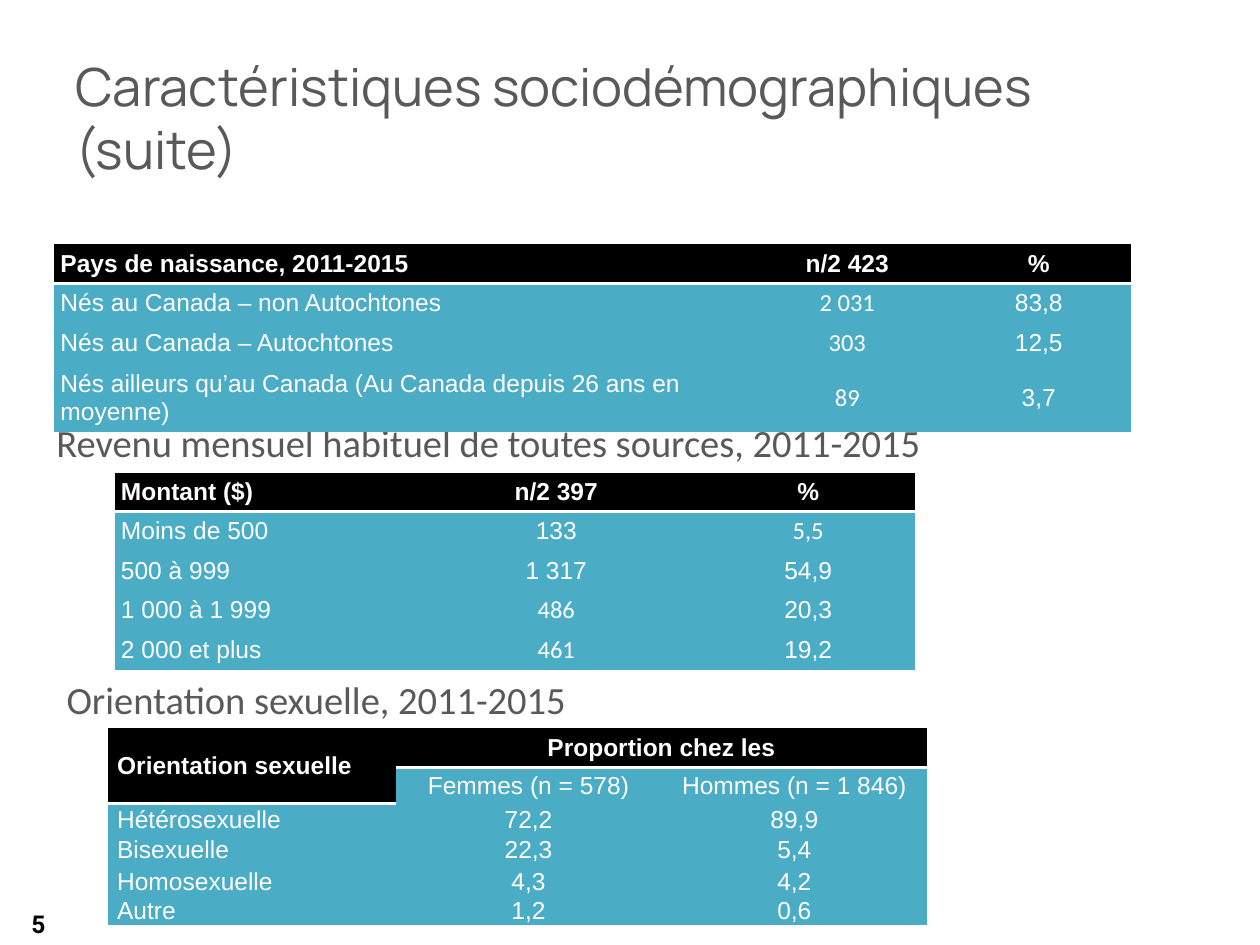
"""Build the slide of sociodemographic characteristics with its three tables."""

from dataclasses import dataclass

from lxml.etree import SubElement
from pptx import Presentation
from pptx.dml.color import RGBColor
from pptx.enum.text import MSO_ANCHOR, PP_ALIGN
from pptx.oxml import parse_xml
from pptx.oxml.ns import nsdecls, qn
from pptx.slide import Slide
from pptx.table import _Cell
from pptx.util import Inches, Pt


@dataclass(frozen=True)
class Theme:
    white: str = "FFFFFF"
    black: str = "000000"
    gray: str = "595959"
    blue: str = "4BACC6"
    title_font: str = "Manrope"
    heading_font: str = "Calibri"
    table_font: str = "Arial"
    number_font: str = "Roboto"
    title_size: int = 30
    heading_size: int = 22
    table_size: int = 14
    rule_width: int = 2
    no_table_style: str = "{2D5ABB26-0587-4C30-8999-92F81FD0307C}"


THEME = Theme()


@dataclass(frozen=True)
class Label:
    text: str
    box: tuple[float, float, float, float]
    font: str
    size: int
    color: str = THEME.gray
    bold: bool = False
    wrap: bool = True
    align: PP_ALIGN = PP_ALIGN.LEFT
    anchor: MSO_ANCHOR = MSO_ANCHOR.MIDDLE


@dataclass(frozen=True)
class DataTable:
    left: float
    top: float
    columns: tuple[float, ...]
    heights: tuple[float, ...]
    rows: tuple[tuple[str, ...], ...]
    side_margin: float = 0.05
    body_margin: float = 0.04
    body_anchor: MSO_ANCHOR = MSO_ANCHOR.MIDDLE
    calibri_cells: tuple[tuple[int, int], ...] = ()
    extra_header_cells: tuple[tuple[int, int], ...] = ()
    merges: tuple[tuple[int, int, int, int], ...] = ()


def heading(text: str, left: float, top: float, width: float) -> Label:
    return Label(text, (left, top, width, 0.47), THEME.heading_font, THEME.heading_size,
                 wrap=False, anchor=MSO_ANCHOR.TOP)


LABELS = (
    Label("5", (0, 7.13, 0.46, 0.4), THEME.number_font, THEME.table_size,
          THEME.black, bold=True, align=PP_ALIGN.RIGHT),
    Label("Caractéristiques sociodémographiques (suite)", (0.5, 0.3, 9, 1.25),
          THEME.title_font, THEME.title_size),
    heading("Revenu mensuel habituel de toutes sources, 2011-2015", 0.35, 3.28, 7.14),
    heading("Orientation sexuelle, 2011-2015", 0.43, 5.32, 4.21),
)

BIRTH_COUNTRY = DataTable(
    0.43, 1.94, (5.51, 1.57, 1.47), (0.31, 0.31, 0.32, 0.54),
    (
        ("Pays de naissance, 2011-2015", "n/2 423", "%"),
        ("Nés au Canada – non Autochtones", "2 031", "83,8"),
        ("Nés au Canada – Autochtones", "303", "12,5"),
        ("Nés ailleurs qu’au Canada (Au Canada depuis 26 ans en moyenne)", "89", "3,7"),
    ),
    calibri_cells=((1, 1), (2, 1), (3, 1)),
)
INCOME = DataTable(
    0.91, 3.75, (2.35, 2.31, 1.69), (0.31, 0.31, 0.31, 0.31, 0.32),
    (
        ("Montant ($)", "n/2 397", "%"),
        ("Moins de 500", "133", "5,5"),
        ("500 à 999", "1 317", "54,9"),
        ("1 000 à 1 999", "486", "20,3"),
        ("2 000 et plus", "461", "19,2"),
    ),
    calibri_cells=((1, 2), (3, 1), (4, 1)),
)
ORIENTATION = DataTable(
    0.86, 5.78, (2.28, 2.11, 2.11), (0.31, 0.29, 0.24, 0.24, 0.25, 0.23),
    (
        ("Orientation sexuelle", "Proportion chez les", ""),
        ("", "Femmes (n = 578)", "Hommes (n = 1 846)"),
        ("Hétérosexuelle", "72,2", "89,9"),
        ("Bisexuelle", "22,3", "5,4"),
        ("Homosexuelle", "4,3", "4,2"),
        ("Autre", "1,2", "0,6"),
    ),
    side_margin=0.07,
    body_margin=0,
    body_anchor=MSO_ANCHOR.BOTTOM,
    extra_header_cells=((1, 0),),
    merges=((0, 0, 1, 0), (0, 1, 0, 2)),
)


def style_paragraph(paragraph, font: str, size: int, color: str, bold: bool,
                    align: PP_ALIGN) -> None:
    paragraph.alignment = align
    paragraph.font.name = font
    paragraph.font.size = Pt(size)
    paragraph.font.bold = bold
    paragraph.font.color.rgb = RGBColor.from_string(color)


def add_label(slide: Slide, label: Label) -> None:
    shape = slide.shapes.add_textbox(*(Inches(length) for length in label.box))
    frame = shape.text_frame
    frame.word_wrap = label.wrap
    frame.vertical_anchor = label.anchor
    frame.text = label.text
    style_paragraph(frame.paragraphs[0], label.font, label.size, label.color,
                    label.bold, label.align)


def add_bottom_rule(cell: _Cell) -> None:
    line = parse_xml(f'<a:lnB {nsdecls("a")} w="{Pt(THEME.rule_width)}"/>')
    fill = SubElement(line, qn("a:solidFill"))
    SubElement(fill, qn("a:srgbClr"), val=THEME.white)
    cell._tc.get_or_add_tcPr().insert(0, line)


def fill_cell(cell: _Cell, data: DataTable, row: int, column: int) -> None:
    header = row == 0 or (row, column) in data.extra_header_cells
    cell.text = data.rows[row][column]
    cell.margin_left = cell.margin_right = Inches(data.side_margin)
    cell.margin_top = cell.margin_bottom = Inches(0 if header else data.body_margin)
    label_row = header or row <= len(data.extra_header_cells)
    cell.vertical_anchor = MSO_ANCHOR.MIDDLE if label_row else data.body_anchor
    cell.fill.solid()
    cell.fill.fore_color.rgb = RGBColor.from_string(THEME.black if header else THEME.blue)
    font = THEME.heading_font if (row, column) in data.calibri_cells else THEME.table_font
    style_paragraph(cell.text_frame.paragraphs[0], font, THEME.table_size, THEME.white,
                    header, PP_ALIGN.CENTER if column else PP_ALIGN.LEFT)
    if header:
        add_bottom_rule(cell)


def add_data_table(slide: Slide, data: DataTable) -> None:
    frame = slide.shapes.add_table(
        len(data.heights), len(data.columns), Inches(data.left), Inches(data.top),
        Inches(sum(data.columns)), Inches(sum(data.heights)))
    table = frame.table
    table.horz_banding = False
    table.first_row = False
    for style in table._tbl.iter(qn("a:tableStyleId")):
        style.text = THEME.no_table_style
    for column, width in zip(table.columns, data.columns):
        column.width = Inches(width)
    for row, height in zip(table.rows, data.heights):
        row.height = Inches(height)
    for row in range(len(data.heights)):
        for column in range(len(data.columns)):
            fill_cell(table.cell(row, column), data, row, column)
    for top, left, bottom, right in data.merges:
        table.cell(top, left).merge(table.cell(bottom, right))


def main() -> None:
    presentation = Presentation()
    presentation.slide_width = Inches(10)
    presentation.slide_height = Inches(7.5)
    slide = presentation.slides.add_slide(presentation.slide_layouts[6])
    for label in LABELS:
        add_label(slide, label)
    for data in (INCOME, ORIENTATION, BIRTH_COUNTRY):
        add_data_table(slide, data)
    presentation.save("out.pptx")


if __name__ == "__main__":
    main()
